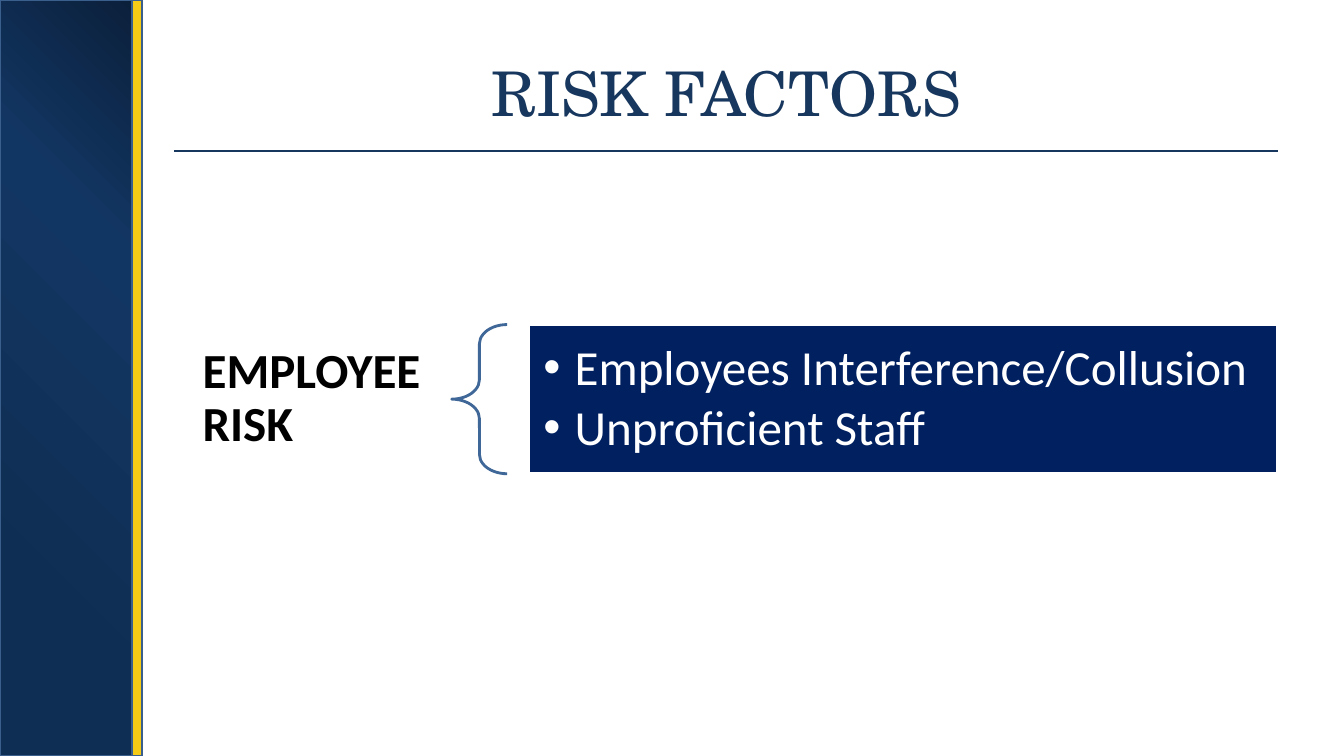
from lxml import etree
from pptx import Presentation
from pptx.dml.color import RGBColor
from pptx.enum.shapes import MSO_CONNECTOR, MSO_SHAPE
from pptx.enum.text import MSO_ANCHOR, PP_ALIGN
from pptx.oxml.ns import qn
from pptx.util import Inches, Pt

RECTANGLE, BRACE = MSO_SHAPE.RECTANGLE, MSO_SHAPE.LEFT_BRACE
STRAIGHT = MSO_CONNECTOR.STRAIGHT
MIDDLE = MSO_ANCHOR.MIDDLE
LEFT, CENTER = PP_ALIGN.LEFT, PP_ALIGN.CENTER

COLORS = {
    "title": "17375E",
    "band_dark": "0B203B",
    "band_mid": "123663",
    "band_end": "0F2E53",
    "band_line": "3A5F8C",
    "stripe": "F6CB16",
    "brace": "3F6797",
    "panel": "002060",
    "white": "FFFFFF",
    "black": "000000",
}


def color(name):
    return RGBColor.from_string(COLORS[name])


def add_box(page, kind, left, top, width, height, line, fill=None):
    box = page.shapes.add_shape(
        kind, Inches(left), Inches(top), Inches(width), Inches(height))
    box.shadow.inherit = False
    if fill:
        box.fill.solid()
        box.fill.fore_color.rgb = color(fill)
    else:
        box.fill.background()
    box.line.color.rgb = color(line)
    box.line.width = Pt(2)
    return box


def fill_radial(box, stops):
    """Fill with a circular gradient that starts in the top right corner."""
    box.fill.gradient()
    gradient = box._element.spPr.find(qn("a:gradFill"))
    for child in list(gradient):
        gradient.remove(child)
    stop_list = etree.SubElement(gradient, qn("a:gsLst"))
    for percent, name in stops:
        stop = etree.SubElement(stop_list, qn("a:gs"), pos=str(percent * 1000))
        etree.SubElement(stop, qn("a:srgbClr"), val=COLORS[name])
    circle = etree.SubElement(gradient, qn("a:path"), {"path": "circle"})
    etree.SubElement(circle, qn("a:fillToRect"), l="100000", b="100000")


def add_rule(page, left, right, top):
    rule = page.shapes.add_connector(
        STRAIGHT, Inches(left), Inches(top), Inches(right), Inches(top))
    rule.line.color.rgb = color("title")
    rule.line.width = Pt(1.5)
    etree.SubElement(rule._element.spPr, qn("a:effectLst"))


def add_bullet(para, indent):
    properties = para._p.get_or_add_pPr()
    properties.set("marL", str(Inches(indent)))
    properties.set("indent", str(-Inches(indent)))
    etree.SubElement(properties, qn("a:buFont"), typeface="Arial")
    etree.SubElement(properties, qn("a:buChar"), char="•")


def add_text(page, lines, left, top, width, height, *, size, ink,
             font="Calibri", bold=False, align=LEFT, spacing=1.0,
             gap=0, inset=(0.1, 0.05), bullet_indent=None):
    box = page.shapes.add_textbox(
        Inches(left), Inches(top), Inches(width), Inches(height))
    frame = box.text_frame
    frame.word_wrap = True
    frame.vertical_anchor = MIDDLE
    frame.margin_left = frame.margin_right = Inches(inset[0])
    frame.margin_top = frame.margin_bottom = Inches(inset[1])
    for index, line in enumerate(lines):
        para = frame.add_paragraph() if index else frame.paragraphs[0]
        if bullet_indent:
            add_bullet(para, bullet_indent)
        para.alignment = align
        para.line_spacing = spacing
        if index:
            para.space_before = Pt(gap)
        span = para.add_run()
        span.text = line
        span.font.name = font
        span.font.size = Pt(size)
        span.font.bold = bold
        span.font.color.rgb = color(ink)


def add_side_band(page):
    band = add_box(page, RECTANGLE, 0, 0, 1.31, 7.5, "band_line")
    fill_radial(band, [(0, "band_dark"), (29, "band_mid"), (79, "band_end")])
    add_box(page, RECTANGLE, 1.31, 0, 0.1, 7.5, "band_line", "stripe")


def add_risk_group(page, label, factors):
    top, height = 3.22, 1.48
    panel = (5.24, top, 7.43, height)
    add_text(page, [label], 1.74, 3.32, 2.73, 1.28, size=35, ink="black",
             bold=True, spacing=0.9, inset=(0.27, 0.1))
    brace = add_box(page, BRACE, 4.48, top, 0.55, height, "brace")
    brace.adjustments[0] = 0.35
    add_box(page, RECTANGLE, *panel, "white", "panel")
    add_text(page, factors, *panel, size=35, ink="white", spacing=0.9,
             gap=5, inset=(0.15, 0.15), bullet_indent=0.31)


def main():
    deck = Presentation()
    deck.slide_width, deck.slide_height = Inches(13.33), Inches(7.5)
    page = deck.slides.add_slide(deck.slide_layouts[6])
    add_side_band(page)
    add_text(page, ["RISK FACTORS"], 1.73, 0.29, 10.95, 1.25, size=44,
             ink="title", font="TeX Gyre Schola", align=CENTER)
    add_risk_group(page, "EMPLOYEE RISK",
                   ["Employees Interference/Collusion", "Unproficient Staff"])
    add_rule(page, 1.73, 12.68, 1.5)
    deck.save("out.pptx")


if __name__ == "__main__":
    main()
